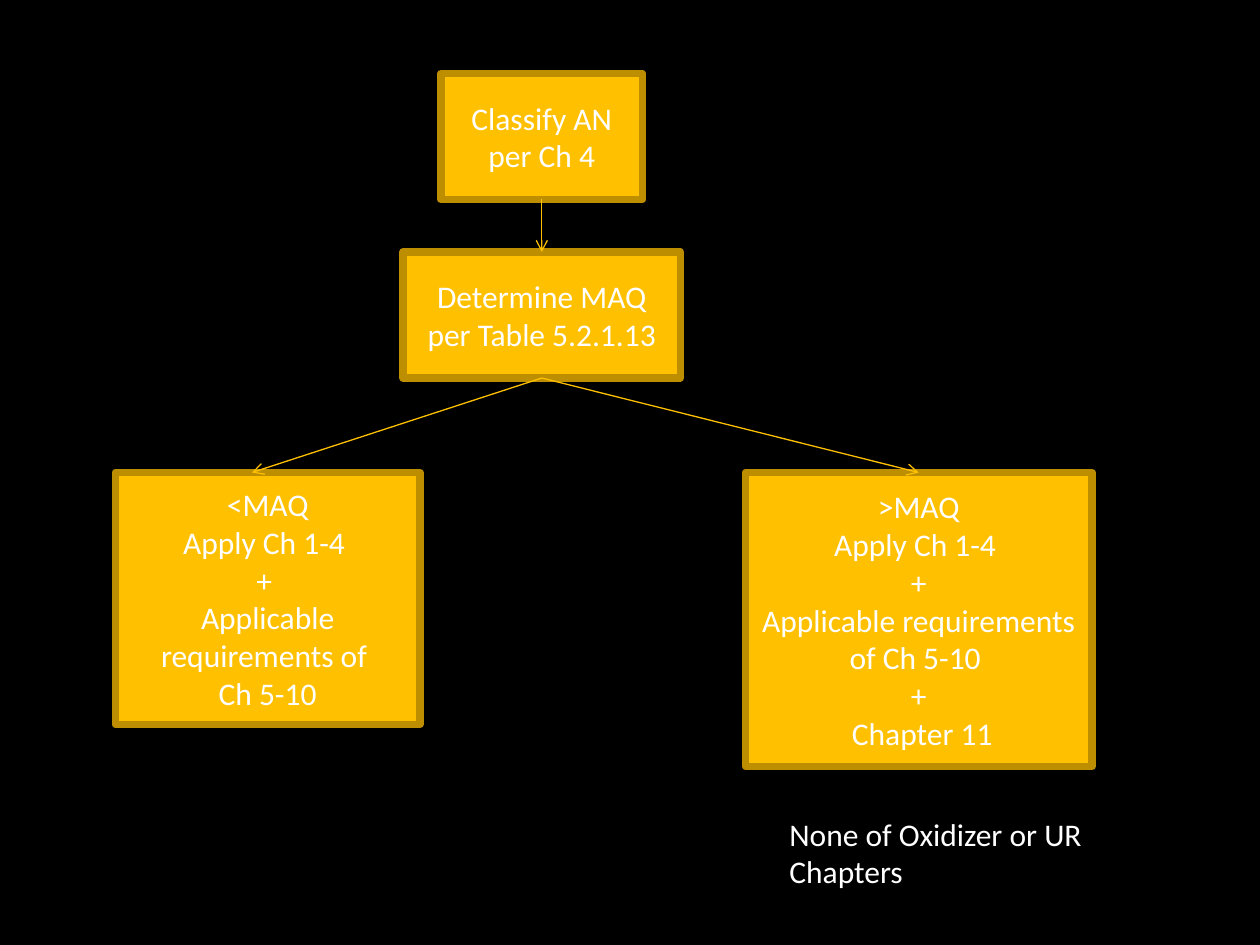
"""Build the flowchart that shows which chapters apply to AN by quantity."""
from lxml import etree
from pptx import Presentation
from pptx import util as u
from pptx.dml.color import RGBColor
from pptx.enum import shapes, text
from pptx.oxml import ns

COLORS = {"back": "000000", "gold": "FFC000", "edge": "BD8E00", "text": "FFFFFF"}
COLUMNS = 120
STEPS = {
    "classify": ((42, 7, 19.2, 12), ["Classify AN per Ch 4"]),
    "determine": ((38.4, 24, 26.4, 12), ["Determine MAQ per Table 5.2.1.13"]),
    "below": ((11, 45, 29, 24), ["<MAQ", "Apply Ch 1-4 ", "+ ",
                                 "Applicable requirements of ", "Ch 5-10"]),
    "above": ((71, 45, 33, 28), [">MAQ", "Apply Ch 1-4 ", "+",
                                 "Applicable requirements of Ch 5-10 ", "+", " Chapter 11"]),
}
ARROWS = [("classify", "determine", 0), ("determine", "below", -1.5), ("determine", "above", 0)]
NOTE = ((74, 77, 39, 8.5), ["None of Oxidizer or UR Chapters"])

deck = Presentation()
deck.slide_width, deck.slide_height = u.Inches(10), u.Inches(7.5)
page = deck.slides.add_slide(deck.slide_layouts[6])


def color(name):
    return RGBColor.from_string(COLORS[name])


def grid(*cells):
    return [round(cell * deck.slide_width / COLUMNS) for cell in cells]


def write(box, lines, size=18, font="Calibri", ink="text",
          align=text.PP_ALIGN.CENTER, anchor=text.MSO_ANCHOR.MIDDLE):
    frame = box.text_frame
    frame.word_wrap = True
    frame.vertical_anchor = anchor
    for index, line in enumerate(lines):
        para = frame.add_paragraph() if index else frame.paragraphs[0]
        para.alignment = align
        span = para.add_run()
        span.text = line
        span.font.size, span.font.name = u.Pt(size), font
        span.font.color.rgb = color(ink)


def add_step(place, lines):
    box = page.shapes.add_shape(shapes.MSO_SHAPE.RECTANGLE, *grid(*place))
    box.shadow.inherit = False
    box.fill.solid()
    box.fill.fore_color.rgb = color("gold")
    box.line.color.rgb = color("edge")
    box.line.width = u.Pt(4.33)
    write(box, lines)
    return box


def add_arrow(source, target, shift):
    arrow = page.shapes.add_connector(
        shapes.MSO_CONNECTOR.STRAIGHT,
        source.left + source.width // 2, source.top + source.height,
        target.left + target.width // 2 + grid(shift)[0], target.top)
    arrow.line.color.rgb = color("gold")
    arrow.line.width = u.Pt(0.75)
    etree.SubElement(arrow.line._get_or_add_ln(), ns.qn("a:tailEnd"), type="arrow")
    etree.SubElement(arrow._element.spPr, ns.qn("a:effectLst"))


page.background.fill.solid()
page.background.fill.fore_color.rgb = color("back")
boxes = {name: add_step(*step) for name, step in STEPS.items()}
for start, end, shift in ARROWS:
    add_arrow(boxes[start], boxes[end], shift)

place, lines = NOTE
note = page.shapes.add_textbox(*grid(*place))
write(note, lines, align=text.PP_ALIGN.LEFT, anchor=text.MSO_ANCHOR.TOP)
note.text_frame.auto_size = text.MSO_AUTO_SIZE.SHAPE_TO_FIT_TEXT

deck.save("out.pptx")
